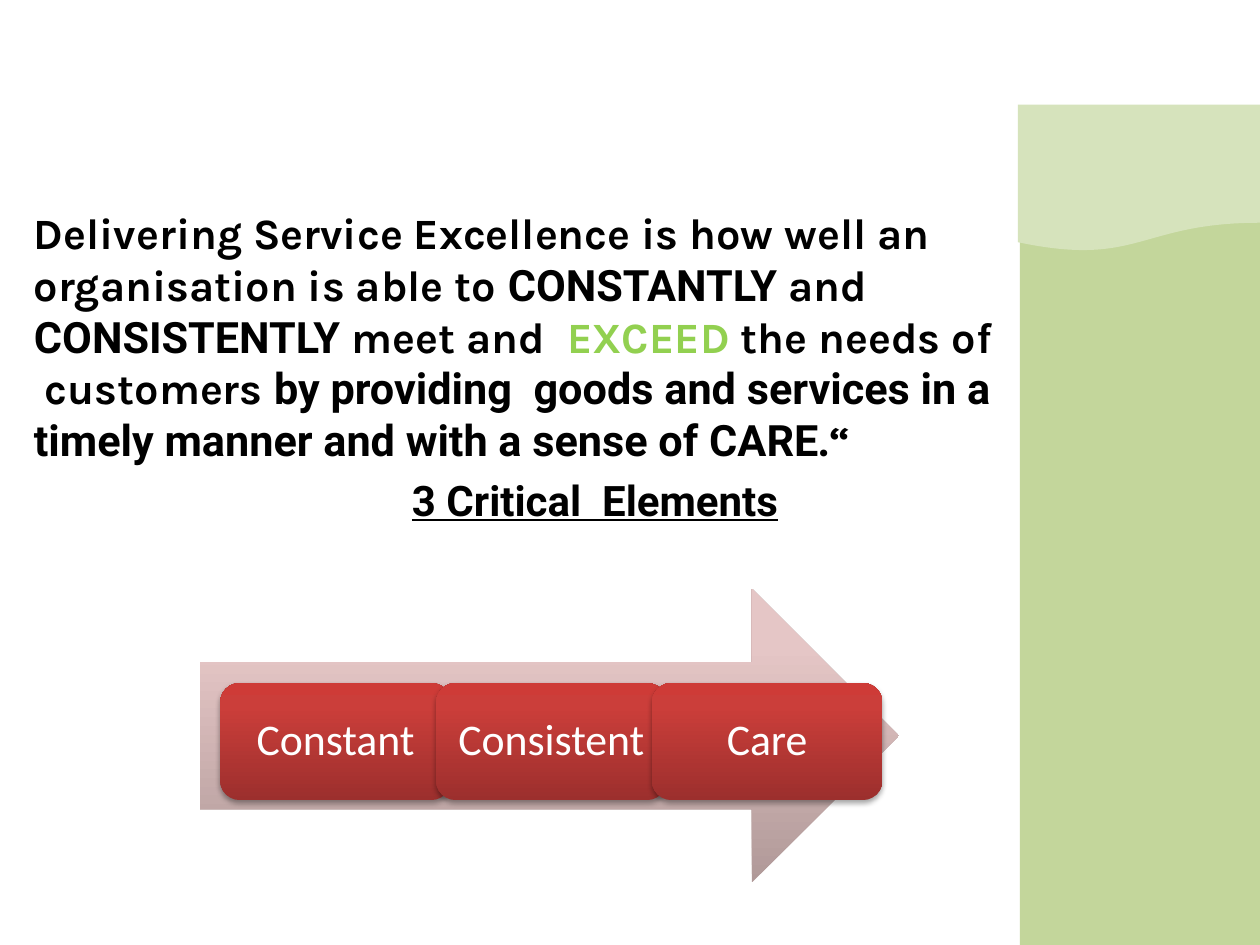
from copy import deepcopy

from lxml.etree import SubElement
from pptx import Presentation
from pptx.dml.color import RGBColor
from pptx.enum.shapes import MSO_SHAPE
from pptx.enum.text import MSO_ANCHOR, MSO_AUTO_SIZE, PP_ALIGN
from pptx.oxml.ns import qn
from pptx.util import Cm, Pt

COLORS = {
    "text": "000000", "accent": "92D050", "white": "FFFFFF",
    "band": "C3D69B", "wave": "D6E3BC",
}
ARROW_STOPS = [(0, "B09998"), (0.8, "E5C6C6"), (1, "E6C7C6")]
CARD_STOPS = [(0, "9C2F2D"), (0.8, "CB3E3A"), (1, "CE3B37")]
NBSP = chr(160)  # keeps its width at the start of a line


class Deck:
    def __init__(self):
        self.prs = Presentation()
        self.prs.slide_width, self.prs.slide_height = Cm(25.4), Cm(19.05)
        # Title and content layout, without its title
        self.s = self.prs.slides.add_slide(self.prs.slide_layouts[1])
        title = self.s.shapes.title.element
        title.getparent().remove(title)

    def shape(self, kind, x, y, w, h, color=None, stops=None):
        sp = self.s.shapes.add_shape(kind, Cm(x), Cm(y), Cm(w), Cm(h))
        sp.shadow.inherit = False
        sp.line.fill.background()
        if stops:
            self.gradient(sp, stops)
        else:
            sp.fill.solid()
            sp.fill.fore_color.rgb = RGBColor.from_string(COLORS[color])
        return sp

    def gradient(self, sp, stops):
        sp.fill.gradient()
        sp.fill.gradient_angle = 90
        gs_list = sp.element.spPr.find(qn("a:gradFill")).find(qn("a:gsLst"))
        gs_list.append(deepcopy(gs_list[-1]))
        for stop, (position, color) in zip(sp.fill.gradient_stops, stops):
            stop.position = position
            stop.color.rgb = RGBColor.from_string(color)

    def drop_shadow(self, sp):
        effects = sp.element.spPr.find(qn("a:effectLst"))
        shadow = SubElement(effects, qn("a:outerShdw"), blurRad=str(Pt(3.1)),
                            dist=str(Pt(1.8)), dir="5400000", rotWithShape="0")
        color = SubElement(shadow, qn("a:srgbClr"), val=COLORS["text"])
        SubElement(color, qn("a:alpha"), val="35000")

    def run(self, p, text, size, font, color="text", bold=False, underline=None):
        r = p.add_run()
        r.text = text
        r.font.size, r.font.name = Pt(size), font
        r.font.bold, r.font.underline = bold, underline
        r.font.color.rgb = RGBColor.from_string(COLORS[color])

    def plain(self, p, indent=0):
        """Take the bullet off and set the left indent."""
        pPr = p._p.get_or_add_pPr()
        pPr.set("marL", str(Cm(indent)))
        pPr.set("indent", "0")
        SubElement(pPr, qn("a:buNone"))
        p.space_before = Pt(0)

    def body(self, x, y, w, h):
        sp = self.s.placeholders[1]
        sp.left, sp.top, sp.width, sp.height = Cm(x), Cm(y), Cm(w), Cm(h)
        tf = sp.text_frame
        tf.word_wrap = True
        tf.auto_size = MSO_AUTO_SIZE.NONE
        return tf

    def card(self, text, x, y, w, h):
        sp = self.shape(MSO_SHAPE.ROUNDED_RECTANGLE, x, y, w, h, stops=CARD_STOPS)
        self.drop_shadow(sp)
        tf = sp.text_frame
        tf.word_wrap = True
        tf.vertical_anchor = MSO_ANCHOR.MIDDLE
        tf.margin_left = tf.margin_right = Cm(0.1)
        p = tf.paragraphs[0]
        p.alignment, p.line_spacing = PP_ALIGN.CENTER, 0.9
        self.run(p, text, 25, "Calibri", "white")


def main():
    deck = Deck()

    # Side band
    deck.shape(MSO_SHAPE.RECTANGLE, 20.56, 2.82, 4.84, 16.23, "band")
    deck.shape(MSO_SHAPE.FLOWCHART_DOCUMENT, 20.52, 2.11, 4.88, 2.97, "wave")

    # Definition
    tf = deck.body(0.43, 4.03, 19.89, 8.74)
    p = tf.paragraphs[0]
    deck.plain(p)
    for text, font, color in [
        ("Delivering Service Excellence is how well an organisation is able to ",
         "Karla", "text"),
        ("CONSTANTLY ", "Roboto", "text"),
        ("and ", "Karla", "text"),
        ("CONSISTENTLY", "Roboto", "text"),
        (" meet and  ", "Karla", "text"),
        ("EXCEED ", "Karla", "accent"),
        (f"the needs of {NBSP}customers ", "Karla", "text"),
        ("by providing  goods and services in a timely manner "
         "and with a sense of CARE", "Roboto", "text"),
        (".“", "Karla", "text"),
    ]:
        deck.run(p, text, 24.7, font, color, bold=True)

    # Heading of the elements
    p = tf.add_paragraph()
    deck.plain(p, indent=7.62)
    p.space_before = Pt(5)
    deck.run(p, "3 Critical  Elements", 24, "Roboto", bold=True, underline=True)

    # Arrow with the three elements
    deck.shape(MSO_SHAPE.RIGHT_ARROW, 4.03, 11.87, 14.09, 5.92, stops=ARROW_STOPS)
    for i, text in enumerate(["Constant", "Consistent", "Care"]):
        deck.card(text, 4.44 + i * 4.35, 13.77, 4.65, 2.36)

    deck.prs.save("out.pptx")


if __name__ == "__main__":
    main()
